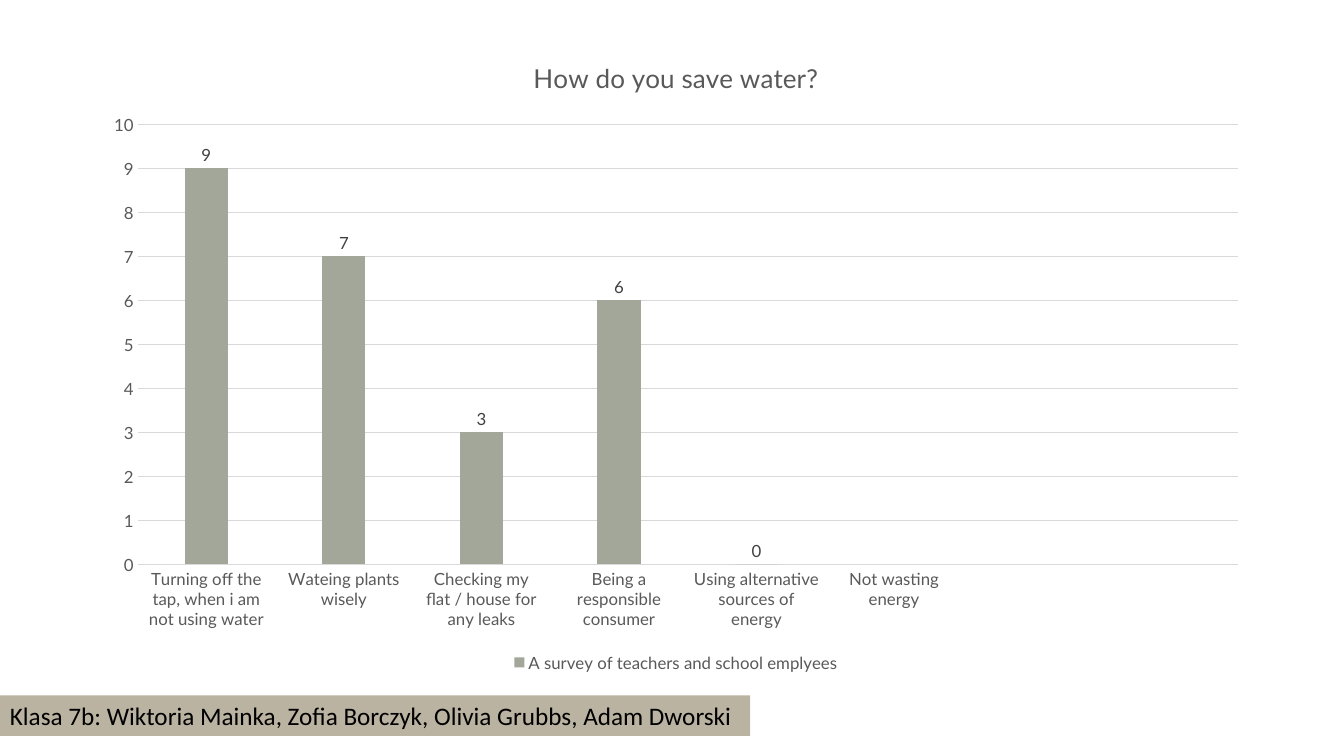
from dataclasses import dataclass

import pptx
import pptx.chart.data
import pptx.dml.color
import pptx.enum.chart
import pptx.enum.shapes
import pptx.enum.text
import pptx.util


@dataclass(frozen=True)
class Theme:
    """Colours, typefaces and type sizes of the deck."""
    bar: str = "A2A79A"
    band: str = "BAB3A1"
    grid: str = "D9D9D9"
    muted: str = "595959"
    label: str = "404040"
    ink: str = "000000"
    chart_face: str = "Lato"
    text_face: str = "Calibri"
    title_size: float = 18.6
    chart_size: float = 12
    text_size: float = 18
    rule_width: float = 0.75


class SlideBuilder:
    """Holds the theme and the current slide, and places elements by shares of its size."""

    def __init__(self, deck, theme):
        self.deck = deck
        self.theme = theme
        self.page = deck.slides.add_slide(deck.slide_layouts[6])

    def place(self, left, top, width, height):
        across, down = self.deck.slide_width, self.deck.slide_height
        return int(left * across), int(top * down), int(width * across), int(height * down)

    def color(self, name):
        return pptx.dml.color.RGBColor.from_string(name)

    def style(self, font, face, size, color):
        font.name = face
        font.size = pptx.util.Pt(size)
        font.bold = False
        font.color.rgb = self.color(color)

    def rule(self, line):
        line.color.rgb = self.color(self.theme.grid)
        line.width = pptx.util.Pt(self.theme.rule_width)

    def band(self, text, area):
        theme = self.theme
        box = self.page.shapes.add_shape(pptx.enum.shapes.MSO_SHAPE.RECTANGLE, *self.place(*area))
        box.shadow.inherit = False
        box.fill.solid()
        box.fill.fore_color.rgb = self.color(theme.band)
        box.line.fill.background()
        frame = box.text_frame
        frame.word_wrap = False
        frame.auto_size = pptx.enum.text.MSO_AUTO_SIZE.SHAPE_TO_FIT_TEXT
        para = frame.paragraphs[0]
        para.alignment = pptx.enum.text.PP_ALIGN.LEFT
        span = para.add_run()
        span.text = text
        self.style(span.font, theme.text_face, theme.text_size, theme.ink)

    def column_chart(self, title, name, answers, area):
        theme = self.theme
        data = pptx.chart.data.CategoryChartData()
        data.categories = [category for category, count in answers]
        data.add_series(name, [count for category, count in answers])
        chart = self.page.shapes.add_chart(
            pptx.enum.chart.XL_CHART_TYPE.COLUMN_CLUSTERED, *self.place(*area), data).chart
        self.style(chart.font, theme.chart_face, theme.chart_size, theme.muted)

        chart.has_title = True
        span = chart.chart_title.text_frame.paragraphs[0].add_run()
        span.text = title
        self.style(span.font, theme.chart_face, theme.title_size, theme.muted)
        chart.chart_title.include_in_layout = False

        chart.has_legend = True
        chart.legend.position = pptx.enum.chart.XL_LEGEND_POSITION.BOTTOM
        chart.legend.include_in_layout = False
        self.style(chart.legend.font, theme.chart_face, theme.chart_size, theme.muted)

        for axis in (chart.category_axis, chart.value_axis):
            axis.major_tick_mark = pptx.enum.chart.XL_TICK_MARK.NONE
            axis.minor_tick_mark = pptx.enum.chart.XL_TICK_MARK.NONE
            self.style(axis.tick_labels.font, theme.chart_face, theme.chart_size, theme.muted)
        self.rule(chart.category_axis.format.line)
        scale = chart.value_axis
        scale.minimum_scale, scale.maximum_scale, scale.major_unit = 0, 10, 1
        scale.format.line.fill.background()
        scale.has_major_gridlines = True
        self.rule(scale.major_gridlines.format.line)

        plot = chart.plots[0]
        plot.gap_width, plot.overlap = 219, -27
        plot.vary_by_categories = False
        series = plot.series[0]
        series.invert_if_negative = False
        series.format.fill.solid()
        series.format.fill.fore_color.rgb = self.color(theme.bar)
        labels = series.data_labels
        labels.show_value = True
        labels.position = pptx.enum.chart.XL_LABEL_POSITION.OUTSIDE_END
        self.style(labels.font, theme.chart_face, theme.chart_size, theme.label)


def main():
    deck = pptx.Presentation()
    deck.slide_width = pptx.util.Inches(13.33)
    deck.slide_height = pptx.util.Inches(7.5)
    slide = SlideBuilder(deck, Theme())
    answers = [
        ("Turning off the tap, when i am not using water", 9),
        ("Wateing plants wisely", 7),
        ("Checking my flat / house for any leaks", 3),
        ("Being a responsible consumer", 6),
        ("Using alternative sources of energy", 0),
        ("Not wasting energy", None),
        ("", None),
        ("", None),
    ]
    slide.column_chart("How do you save water?", "A survey of teachers and school emplyees",
                       answers, (0.9 / 13.33, 0.36 / 7.5, 11.61 / 13.33, 6.35 / 7.5))
    slide.band("Klasa 7b: Wiktoria Mainka, Zofia Borczyk, Olivia Grubbs, Adam Dworski",
               (0, 0.92, 7.44 / 13.33, 0.4 / 7.5))
    deck.save("out.pptx")


if __name__ == "__main__":
    main()
